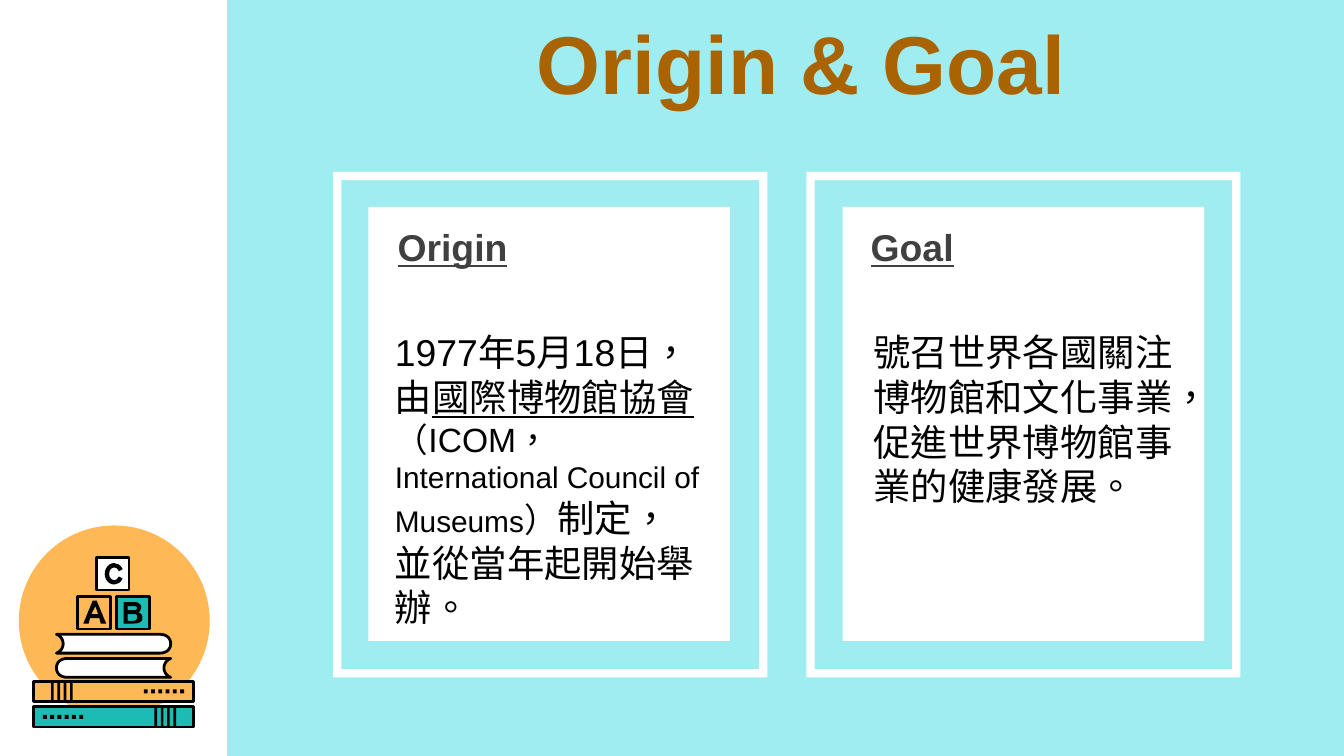
from lxml.etree import SubElement
from pptx import Presentation
from pptx.dml.color import RGBColor
from pptx.enum.shapes import MSO_SHAPE as Kind
from pptx.enum.text import MSO_ANCHOR, MSO_AUTO_SIZE, PP_ALIGN
from pptx.oxml.ns import qn
from pptx.util import Inches, Pt

THEME = {
    "font": "Arial", "sky": "9FEDF0", "gold": "FEB856", "teal": "1CBBB4",
    "white": "FFFFFF", "ink": "000000", "head": "404040", "title": "A96301",
    "huge": 44, "big": 20, "mid": 18, "small": 16, "line": 1.5,
}

# Each run: text, size, underlined
TITLE = "Origin & Goal"
PANELS = [
    {"head": "Origin", "size": (2.47, 2.05), "body": [
        ("1977年5月18日，由", "big", False),
        ("國際博物館協會", "big", True),
        ("（ICOM，", "mid", False),
        ("International Council of Museums", "small", False),
        ("）", "mid", False),
        ("制定，並從當年起開始舉辦。", "big", False)]},
    {"head": "Goal", "size": (2.56, 1.45), "body": [
        ("號召世界各國關注博物館和文化事業，促進世界博物館事業的健康發展。", "big", False)]},
]

# Outlines: a pair is a corner, six numbers are a curve
LETTER_A = [
    [(.71, 4.51), (.68, 4.57), (.73, 4.57)],
    [(.69, 4.47), (.72, 4.47), (.79, 4.64), (.75, 4.64), (.74, 4.6),
     (.67, 4.6), (.66, 4.64), (.62, 4.64)],
]
LETTER_B = [
    [(.95, 4.57), (.95, 4.62), (1, 4.62), (1.02, 4.61, 1.02, 4.61, 1.02, 4.59),
     (1.02, 4.58, 1.02, 4.57, 1, 4.57)],
    [(.95, 4.51), (.95, 4.54), (1, 4.54), (1.01, 4.54, 1.02, 4.54, 1.02, 4.52),
     (1.02, 4.52, 1.01, 4.51, 1, 4.51)],
    [(.92, 4.48), (1, 4.48), (1.04, 4.48, 1.05, 4.51, 1.05, 4.51),
     (1.05, 4.54, 1.04, 4.55, 1.03, 4.56), (1.05, 4.56, 1.06, 4.58, 1.06, 4.6),
     (1.06, 4.63, 1.03, 4.64, 1, 4.64), (.92, 4.64)],
]
BOOK = [[(.42, 4.72), (1.19, 4.72), (1.24, 4.72, 1.27, 4.75, 1.27, 4.79),
         (1.27, 4.83, 1.24, 4.86, 1.19, 4.86), (.42, 4.86),
         (.45, 4.85, .47, 4.82, .47, 4.79), (.47, 4.76, .45, 4.73, .42, 4.72)]]

WIDE = 10
HIGH = WIDE * 9 / 16
SIDE = 1.69           # width of the white side band, and its mirror line
PITCH = 3.52          # from one panel to the next

deck = Presentation()
deck.slide_width, deck.slide_height = Inches(WIDE), Inches(HIGH)
slide = deck.slides.add_slide(deck.slide_layouts[6])
shapes = slide.shapes


def color(name):
    return RGBColor.from_string(THEME[name])


def paint(shape, fill, line=False):
    shape.shadow.inherit = False
    shape.fill.solid()
    shape.fill.fore_color.rgb = color(fill)
    if line:
        shape.line.color.rgb = color("ink")
        shape.line.width = Pt(THEME["line"])
    else:
        shape.line.fill.background()
    return shape


def draw(kind, x, y, w, h, fill, line=False):
    box = [Inches(v) for v in (x, y, w, h)]
    return paint(shapes.add_shape(kind, *box), fill, line)


def trace(path, steps=8):
    """Turn corners and curves into a list of points."""
    points = []
    for part in path:
        if len(part) == 2:
            points.append(part)
            continue
        a, (b, c, d) = points[-1], (part[:2], part[2:4], part[4:])
        for n in range(1, steps + 1):
            t = n / steps
            u = 1 - t
            points.append(tuple(
                u**3 * a[i] + 3 * u * u * t * b[i] + 3 * u * t * t * c[i] + t**3 * d[i]
                for i in (0, 1)))
    return points


def outline(paths, fill, line=False, flip=False, drop=0):
    form = None
    for path in paths:
        points = [(Inches(SIDE - x if flip else x), Inches(y + drop))
                  for x, y in trace(path)]
        if form is None:
            form = shapes.build_freeform(*points[0])
        else:
            form.move_to(*points[0])
        form.add_line_segments(points[1:], close=True)
    paint(form.convert_to_shape(), fill, line)


def write(x, y, w, h, runs, tone="ink", bold=False):
    box = shapes.add_textbox(*[Inches(v) for v in (x, y, w, h)])
    frame = box.text_frame
    frame.word_wrap = True
    frame.auto_size = MSO_AUTO_SIZE.SHAPE_TO_FIT_TEXT
    for text, size, under in runs:
        run = frame.paragraphs[0].add_run()
        run.text = text
        font = run.font
        font.name, font.size = THEME["font"], Pt(THEME[size])
        font.bold, font.underline = bold, under
        font.color.rgb = color(tone)
        run._r.get_or_add_rPr().set("lang", "zh-TW")
    return frame


def spine(y, fill, flip):
    """A closed book lying flat, with bands at one end and dots at the other."""
    draw(Kind.RECTANGLE, .25, y, 1.19, .15, fill, True)
    marks = [(.38 + .047 * n, 0, .02, .15) for n in range(4)]
    marks += [(1.07 + .054 * n, .06, .03, .03) for n in range(6)]
    for x, down, w, h in marks:
        left = SIDE - x - w if flip else x
        draw(Kind.RECTANGLE, left, y + down, w, h, "ink")


# Backdrop and the stack of books
draw(Kind.RECTANGLE, SIDE, 0, WIDE - SIDE, HIGH, "sky")
draw(Kind.OVAL, .14, 3.91, 1.42, 1.42, "gold")
spine(5.07, "gold", False)
spine(5.26, "teal", True)
for x, y, fill in [(.58, 4.44, "gold"), (.87, 4.44, "teal"), (.72, 4.15, "white")]:
    draw(Kind.RECTANGLE, x, y, .24, .24, fill, True)
outline(LETTER_A, "ink")
outline(LETTER_B, "ink")
arc = draw(Kind.BLOCK_ARC, .78, 4.19, .14, .16, "ink")
for n, value in enumerate((17.57, 198.9, .23)):
    arc.adjustments[n] = value
outline(BOOK, "white", True)
outline(BOOK, "white", True, flip=True, drop=.18)

# Title
title = write(1.93, .03, 8.07, .85, [(TITLE, "huge", False)], "title", True)
title.auto_size = MSO_AUTO_SIZE.NONE
title.vertical_anchor = MSO_ANCHOR.MIDDLE
title.paragraphs[0].alignment = PP_ALIGN.CENTER
props = title.paragraphs[0].runs[0]._r.get_or_add_rPr()
edge = SubElement(props, qn("a:ln"), w=str(Pt(1)))
SubElement(SubElement(edge, qn("a:solidFill")), qn("a:srgbClr"), val=THEME["gold"])
props.insert(0, edge)

# Panels
for n, panel in enumerate(PANELS):
    left = 2.48 + n * PITCH
    rim = draw(Kind.FRAME, left, 1.28, 3.23, 3.76, "white")
    rim.adjustments[0] = .019
    draw(Kind.RECTANGLE, left + .26 + n * .01, 1.54, 2.69, 3.23, "white")
    write(left + .38, 1.62, 2.47, .44, [(panel["head"], "big", True)], "head", True)
    write(left + .36 + n * .04, 2.4, *panel["size"], panel["body"])

deck.save("out.pptx")
